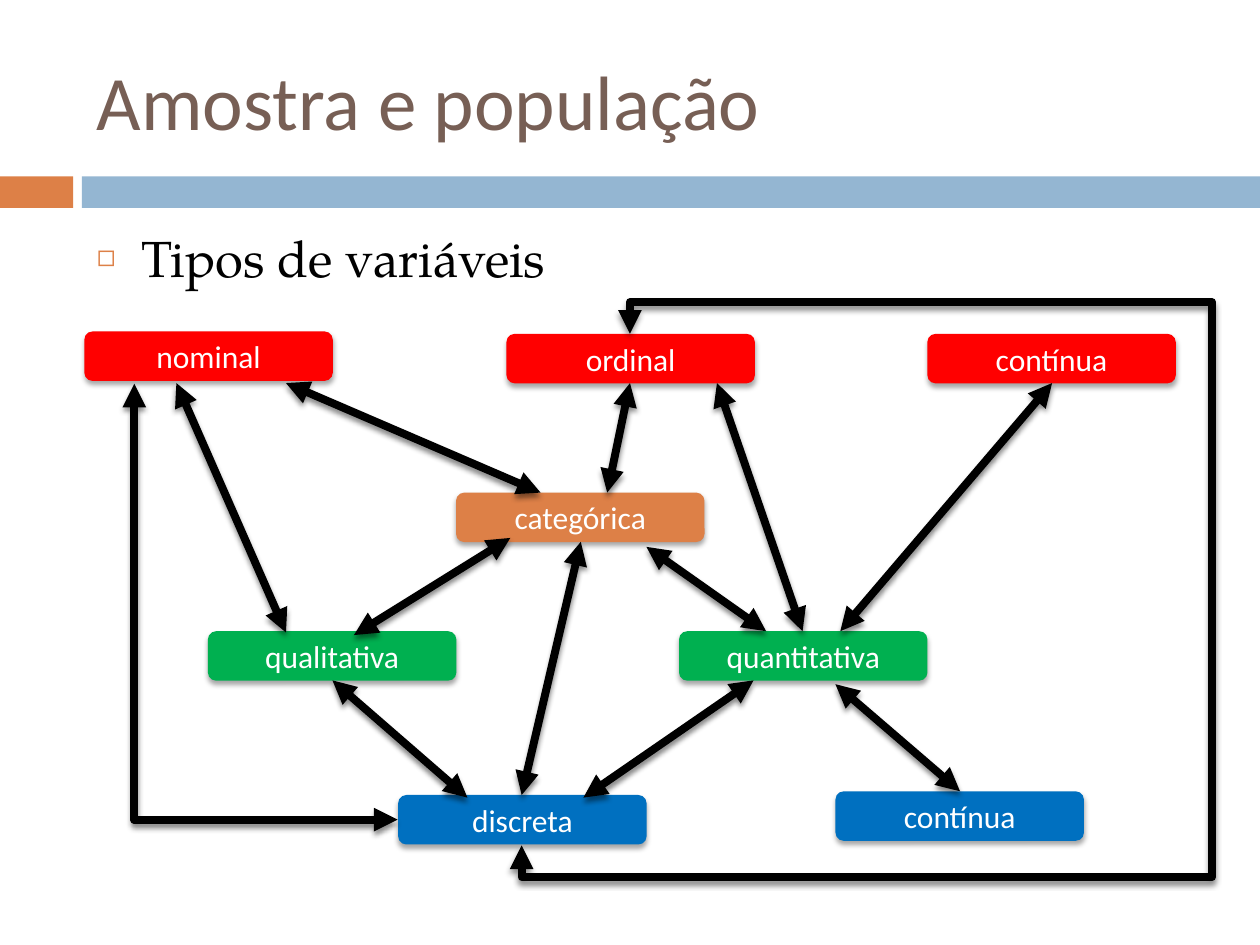
from lxml.etree import SubElement
from pptx import Presentation
from pptx.dml.color import RGBColor
from pptx.enum.shapes import MSO_CONNECTOR, MSO_SHAPE
from pptx.enum.text import MSO_ANCHOR, MSO_AUTO_SIZE, PP_ALIGN
from pptx.oxml.ns import qn
from pptx.util import Pt

# Content, all lengths in points
HEX = {"red": "FF0000", "green": "00B050", "blue": "0070C0", "orange": "DD8047",
       "sky": "94B6D2", "brown": "775F55", "black": "000000", "white": "FFFFFF"}
TITLE, TOPIC = "Amostra e população", "Tipos de variáveis"
BARS = [("orange", 0, 41.8), ("sky", 46.8, 673.2)]
BOX_W, BOX_H = 142, 28.3
BOXES = [
    ("quantitativa", "green", 388, 360.7),
    ("nominal", "red", 48.2, 189.4),
    ("qualitativa", "green", 118.8, 360.7),
    ("categórica", "orange", 260.6, 281.5),
    ("discreta", "blue", 227.5, 454.3),
    ("contínua", "blue", 477.4, 452.2),
    ("ordinal", "red", 289.4, 190.8),
    ("contínua", "red", 529.9, 190.8),
]
LINKS = [
    (100.8, 218.9, 163.4, 361.4),   # nominal - qualitativa
    (190, 388.8, 267.1, 455.8),     # qualitativa - discreta
    (163.4, 218.9, 308.9, 281.5),   # nominal - categórica
    (360, 218.9, 347, 281.5),       # ordinal - categórica
    (409.7, 218.9, 458.6, 360.7),   # ordinal - quantitativa
    (601.2, 218.9, 480.2, 360.7),   # contínua - quantitativa
    (477.4, 391, 548.6, 452.2),     # quantitativa - contínua
    (333.4, 455.8, 430.6, 388.8),   # discreta - quantitativa
    (331.9, 309.6, 298.1, 454.3),   # categórica - discreta
    (202.3, 362.9, 291.6, 307.4),   # qualitativa - categórica
    (369.4, 312.5, 437.8, 360.7),   # categórica - quantitativa
]
# Preset, frame before turning, turn and flips, bend adjustments
BENDS = [
    ("bentConnector2", (27.4, 268.6, 249.1, 150.5),
     {"rot": 270, "flipH": 1}, []),
    ("bentConnector5", (182.9, 306, 292.3, 61.9),
     {"rot": 90, "flipH": 1, "flipV": 1}, [-6200, 637300, 106200]),
]


def tint(name):
    return RGBColor.from_string(HEX[name])


def put(item, **vals):
    for key, val in vals.items():
        setattr(item, key, val)


def place(shape, *frame):
    put(shape, **dict(zip(("left", "top", "width", "height"), map(Pt, frame))))


def write(shape, text, size, color, face="Calibri", **form):
    para = shape.text_frame.paragraphs[0]
    put(para, **form)
    run = para.add_run()
    run.text = text
    put(run.font, size=Pt(size), name=face)
    run.font.color.rgb = tint(color)
    return para


def node(parent, tag, **attrs):
    return SubElement(parent, qn(tag), {k: str(v) for k, v in attrs.items()})


def shade(shape, alpha, dist):
    prop = shape.element.spPr
    effect = prop.find(qn("a:effectLst"))
    if effect is None:
        effect = node(prop, "a:effectLst")
    cast = node(effect, "a:outerShdw", blurRad=Pt(3), dist=Pt(dist),
                dir=90 * 60000, rotWithShape=0)
    color = node(cast, "a:srgbClr", val=HEX["black"])
    node(color, "a:alpha", val=alpha * 1000)


def block(kind, color, *frame):
    shape = slide.shapes.add_shape(kind, *map(Pt, frame))
    shape.shadow.inherit = False
    shape.fill.solid()
    shape.fill.fore_color.rgb = tint(color)
    shape.line.fill.background()
    return shape


def link(kind, *ends):
    wire = slide.shapes.add_connector(kind, *map(Pt, ends))
    wire.line.width = Pt(4.5)
    wire.line.color.rgb = tint("black")
    line = wire.line._get_or_add_ln()
    node(line, "a:round")
    for end in ("a:headEnd", "a:tailEnd"):
        node(line, end, type="triangle")
    shade(wire, 45, 2.4)
    return wire


deck = Presentation()
put(deck, slide_width=Pt(720), slide_height=Pt(540))
slide = deck.slides.add_slide(deck.slide_layouts[1])
head, body = slide.placeholders

# Title and topic
place(head, 48.2, 18, 642.2, 77.8)
place(body, 48.2, 126, 642.2, 376.6)
for area, anchor in ((head, MSO_ANCHOR.MIDDLE), (body, MSO_ANCHOR.TOP)):
    put(area.text_frame, vertical_anchor=anchor, word_wrap=True,
        auto_size=MSO_AUTO_SIZE.NONE)
write(head, TITLE, 44, "brown", alignment=PP_ALIGN.LEFT)
para = write(body, TOPIC, 29, "black", "TeX Gyre Pagella", space_before=Pt(7))
prop = para._p.get_or_add_pPr()
prop.set("marL", str(Pt(25.2)))
prop.set("indent", str(Pt(-25.2)))
node(node(prop, "a:buClr"), "a:srgbClr", val=HEX["orange"])
node(prop, "a:buSzPct", val=60000)
node(prop, "a:buChar", char="◻")

# Bars under the title
for color, left, width in BARS:
    block(MSO_SHAPE.RECTANGLE, color, left, 100.8, width, 18)

# Variable types
for text, color, left, top in BOXES:
    box = block(MSO_SHAPE.ROUNDED_RECTANGLE, color, left, top, BOX_W, BOX_H)
    shade(box, 35, 2)
    box.text_frame.vertical_anchor = MSO_ANCHOR.MIDDLE
    write(box, text, 18, "white", alignment=PP_ALIGN.CENTER)

# Straight arrows
for ends in LINKS:
    link(MSO_CONNECTOR.STRAIGHT, *ends)

# Bent arrows
for preset, frame, turn, bends in BENDS:
    wire = link(MSO_CONNECTOR.ELBOW, 0, 0, 1, 1)
    place(wire, *frame)
    prop = wire.element.spPr
    form = prop.find(qn("a:xfrm"))
    for key, val in turn.items():
        form.set(key, str(val * 60000 if key == "rot" else val))
    geom = prop.find(qn("a:prstGeom"))
    geom.set("prst", preset)
    for old in list(geom):
        geom.remove(old)
    guides = node(geom, "a:avLst")
    for num, val in enumerate(bends, 1):
        node(guides, "a:gd", name=f"adj{num}", fmla=f"val {val}")

deck.save("out.pptx")
